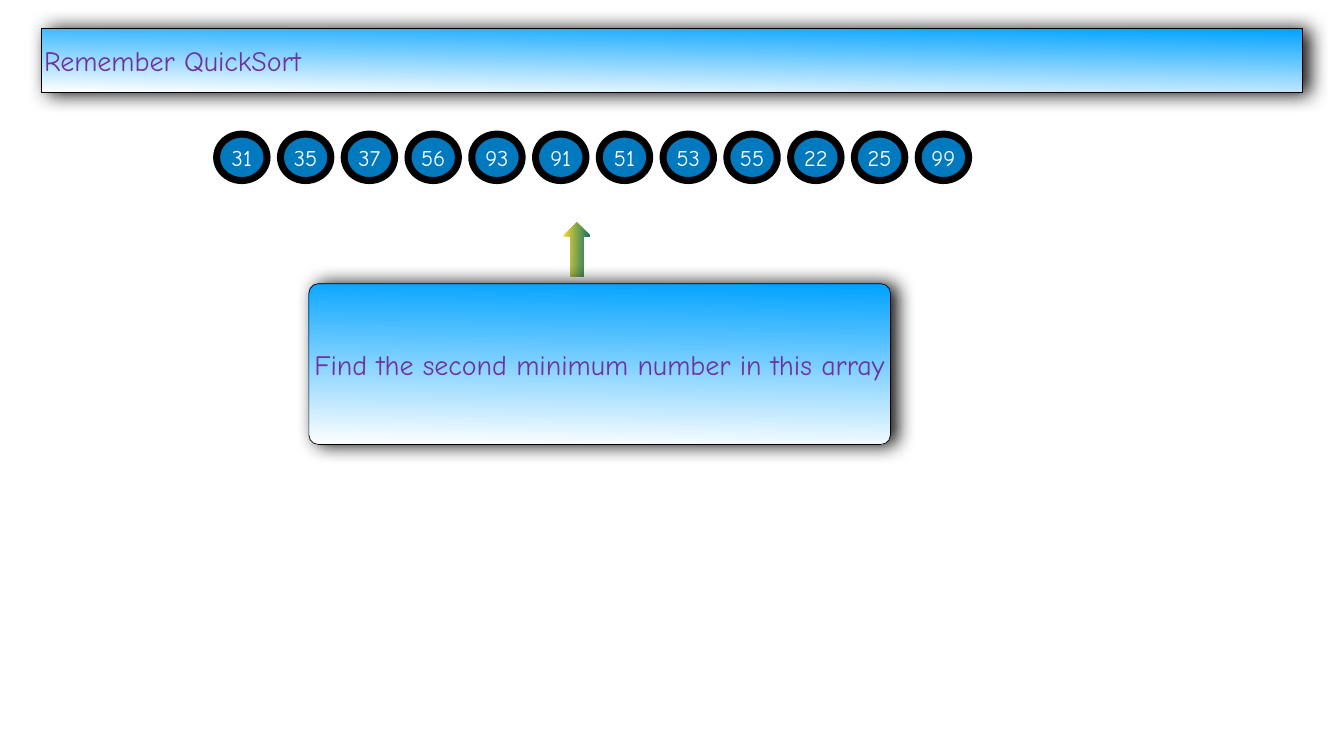
from lxml.etree import SubElement
from pptx import Presentation
from pptx.dml.color import RGBColor
from pptx.enum.shapes import MSO_SHAPE
from pptx.enum.text import MSO_ANCHOR, MSO_AUTO_SIZE, PP_ALIGN
from pptx.oxml import parse_xml
from pptx.oxml.ns import nsdecls, qn
from pptx.util import Cm, Pt

SKY = RGBColor(0x00, 0xA2, 0xFF)
WHITE = RGBColor(0xFF, 0xFF, 0xFF)
BLACK = RGBColor(0x00, 0x00, 0x00)
PURPLE = RGBColor(0x70, 0x30, 0xA0)
BLUE = RGBColor(0x00, 0x79, 0xBF)
YELLOW = RGBColor(0xFF, 0xD9, 0x32)
TEAL = RGBColor(0x0B, 0x74, 0x68)

FONT = "Comic Neue"
CORNER = 0.059
NUMBERS = [31, 35, 37, 56, 93, 91, 51, 53, 55, 22, 25, 99]


def write(shape, text, size=40, color=PURPLE, align=PP_ALIGN.LEFT):
    frame = shape.text_frame
    frame.word_wrap = True
    frame.auto_size = MSO_AUTO_SIZE.NONE
    frame.vertical_anchor = MSO_ANCHOR.MIDDLE
    frame.margin_left = frame.margin_right = Cm(0.14)
    frame.margin_top = frame.margin_bottom = Cm(0.14)
    para = frame.paragraphs[0]
    para.alignment = align
    span = para.add_run()
    span.text = text
    span.font.name = FONT
    span.font.size = Pt(size)
    span.font.color.rgb = color


def fill_gradient(shape, start, end):
    shape.fill.gradient()
    shape.fill.gradient_angle = 269
    for stop, color in zip(shape.fill.gradient_stops, (start, end)):
        stop.color.rgb = color


def outline(shape, width):
    shape.line.color.rgb = BLACK
    shape.line.width = Pt(width)


def style_panel(panel, text):
    """Give a panel its gradient, outline, soft shadow and text."""
    fill_gradient(panel, SKY, WHITE)
    outline(panel, 1)
    panel.shadow.inherit = False
    effects = panel.element.spPr.find(qn("a:effectLst"))
    shadow = SubElement(effects, qn("a:outerShdw"), blurRad=str(Pt(28)),
                        dist=str(Pt(9)), dir="0", rotWithShape="0")
    color = SubElement(shadow, qn("a:srgbClr"), val=str(BLACK))
    SubElement(color, qn("a:alpha"), val="97000")
    write(panel, text)


def place_title(page, left, top, width, height):
    title = page.shapes.title
    title.left, title.top, title.width, title.height = left, top, width, height
    title.element.spPr.append(parse_xml(
        f'<a:prstGeom {nsdecls("a")} prst="roundRect"><a:avLst>'
        f'<a:gd name="adj" fmla="val {round(CORNER * 100000)}"/>'
        '</a:avLst></a:prstGeom>'))
    style_panel(title, "Remember QuickSort")


def add_array(page, left, top, width, height):
    """Spread the numbered circles evenly over the given box."""
    diameter = Cm(2.54)
    step = (width - diameter) / (len(NUMBERS) - 1)
    for index, number in enumerate(NUMBERS):
        circle = page.shapes.add_shape(
            MSO_SHAPE.OVAL, left + round(index * step), top, diameter, height)
        circle.shadow.inherit = False
        circle.fill.solid()
        circle.fill.fore_color.rgb = BLUE
        outline(circle, 10)
        write(circle, str(number), size=32, color=WHITE, align=PP_ALIGN.CENTER)


def add_task(page, left, top, width, height):
    """Add the task panel and the arrow that points up from it."""
    arrow = page.shapes.add_shape(
        MSO_SHAPE.RIGHT_ARROW, left + Cm(12.14), top - Cm(2.39), Cm(2.72), Cm(1.35))
    arrow.rotation = 270
    arrow.shadow.inherit = False
    arrow.line.fill.background()
    fill_gradient(arrow, YELLOW, TEAL)

    panel = page.shapes.add_shape(
        MSO_SHAPE.ROUNDED_RECTANGLE, left, top, width, height)
    panel.adjustments[0] = CORNER
    style_panel(panel, "Find the second minimum number in this array")


def main():
    deck = Presentation()
    deck.slide_width, deck.slide_height = Cm(67.74), Cm(38.1)
    page = deck.slides.add_slide(deck.slide_layouts.get_by_name("Title Only"))
    place_title(page, Cm(2.08), Cm(1.42), Cm(63.58), Cm(3.23))
    add_array(page, Cm(10.92), Cm(6.76), Cm(37.9), Cm(2.34))
    add_task(page, Cm(15.57), Cm(14.3), Cm(29.31), Cm(8.1))
    deck.save("out.pptx")


if __name__ == "__main__":
    main()
